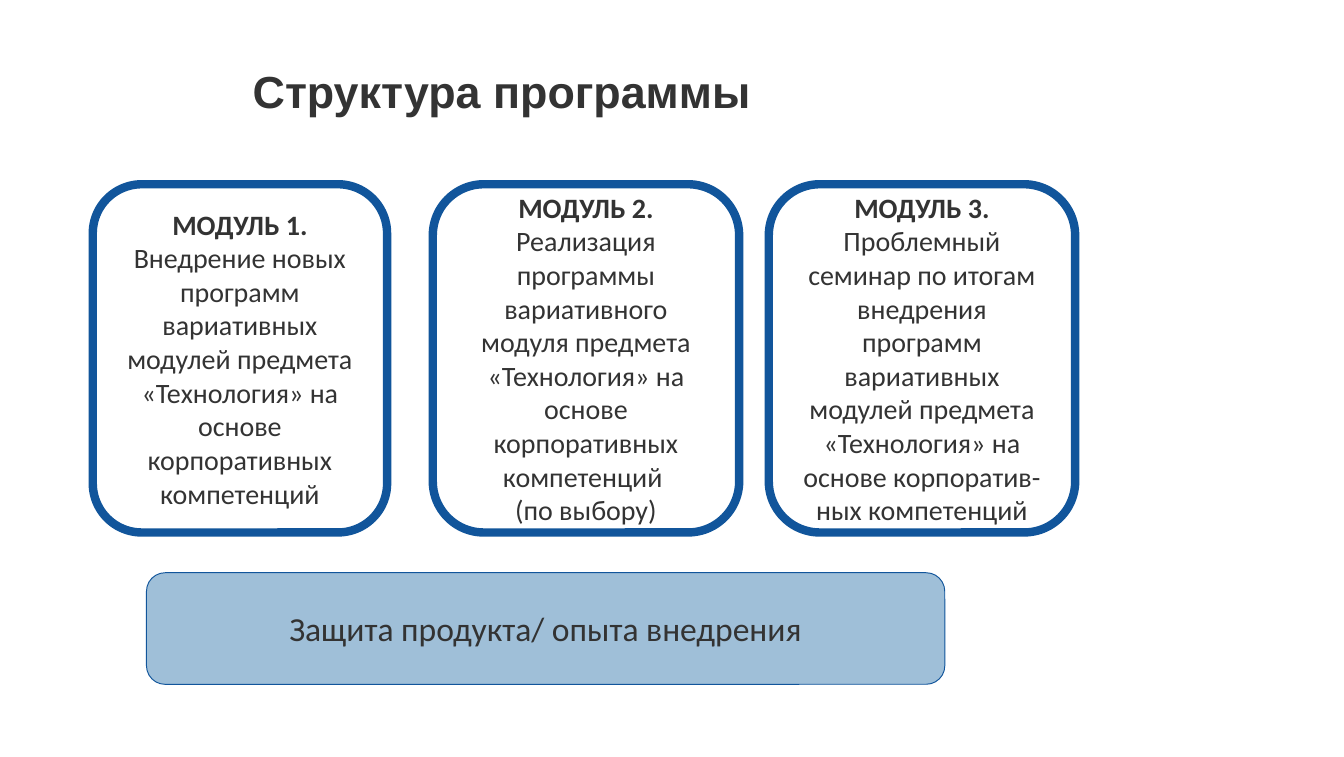
from dataclasses import dataclass

import pptx
import pptx.dml.color
import pptx.enum.shapes
import pptx.enum.text
import pptx.presentation
import pptx.shapes.autoshape
import pptx.slide
import pptx.text.text
import pptx.util

Inches = pptx.util.Inches
RGBColor = pptx.dml.color.RGBColor

TEXT = RGBColor(0x33, 0x33, 0x33)
BLUE = RGBColor(0x11, 0x55, 0x9B)
LIGHT_BLUE = RGBColor(0x9F, 0xBF, 0xD8)
WHITE = RGBColor(0xFF, 0xFF, 0xFF)

MODULE_TOP, MODULE_HEIGHT = 1.37, 2.59
BAND_WIDTH, BAND_HEIGHT = 5.94, 0.83  # shared by the title and the final stage


@dataclass
class Module:
    left: float
    width: float
    heading: str
    description: str
    note: str = ""


MODULES = [
    Module(0.69, 2.19, "МОДУЛЬ 1. ",
           "Внедрение новых программ вариативных модулей предмета "
           "«Технология» на основе корпоративных компетенций"),
    Module(3.22, 2.28, "МОДУЛЬ 2.",
           " Реализация программы вариативного модуля предмета "
           "«Технология» на основе корпоративных компетенций ",
           "(по выбору)"),
    Module(5.72, 2.28, "МОДУЛЬ 3.",
           " Проблемный семинар по итогам внедрения программ вариативных "
           "модулей предмета «Технология» на основе корпоратив-ных компетенций"),
]


def add_run(paragraph: pptx.text.text._Paragraph, text: str, size: float,
            bold: bool = False, font: str = "Calibri") -> None:
    run = paragraph.add_run()
    run.text = text
    run.font.name = font
    run.font.size = pptx.util.Pt(size)
    run.font.bold = bold
    run.font.color.rgb = TEXT


def add_card(slide: pptx.slide.Slide, left: float, top: float, width: float,
             height: float, fill: RGBColor,
             line_width: float) -> pptx.shapes.autoshape.Shape:
    card = slide.shapes.add_shape(
        pptx.enum.shapes.MSO_SHAPE.ROUNDED_RECTANGLE,
        Inches(left), Inches(top), Inches(width), Inches(height))
    card.shadow.inherit = False
    card.fill.solid()
    card.fill.fore_color.rgb = fill
    card.line.color.rgb = BLUE
    card.line.width = pptx.util.Pt(line_width)
    card.text_frame.word_wrap = True
    card.text_frame.vertical_anchor = pptx.enum.text.MSO_ANCHOR.MIDDLE
    card.text_frame.paragraphs[0].alignment = pptx.enum.text.PP_ALIGN.CENTER
    return card


def add_module(slide: pptx.slide.Slide, module: Module) -> None:
    card = add_card(slide, module.left, MODULE_TOP, module.width,
                    MODULE_HEIGHT, WHITE, 4.5)
    summary = card.text_frame.paragraphs[0]
    add_run(summary, module.heading, 15, bold=True)
    add_run(summary, module.description, 15)
    if module.note:
        note = card.text_frame.add_paragraph()
        note.alignment = pptx.enum.text.PP_ALIGN.CENTER
        add_run(note, module.note, 15)


def add_title(slide: pptx.slide.Slide, text: str) -> None:
    title = slide.shapes.title
    title.left, title.top = Inches(1.78), Inches(0.47)
    title.width, title.height = Inches(BAND_WIDTH), Inches(BAND_HEIGHT)
    title.text_frame.auto_size = pptx.enum.text.MSO_AUTO_SIZE.NONE
    title.text_frame.vertical_anchor = pptx.enum.text.MSO_ANCHOR.TOP
    heading = title.text_frame.paragraphs[0]
    heading.alignment = pptx.enum.text.PP_ALIGN.LEFT
    heading.line_spacing = 0.9
    add_run(heading, text, 24, bold=True, font="Arial")


def main() -> None:
    deck = pptx.Presentation()
    deck.slide_width, deck.slide_height = Inches(10), Inches(5.63)
    slide = deck.slides.add_slide(deck.slide_layouts[5])

    # Title
    add_title(slide, "Структура программы")

    # Programme modules
    for module in MODULES:
        add_module(slide, module)

    # Final stage
    defence = add_card(slide, 1.09, 4.26, BAND_WIDTH, BAND_HEIGHT,
                       LIGHT_BLUE, 0.5)
    add_run(defence.text_frame.paragraphs[0],
            "Защита продукта/ опыта внедрения", 18)

    deck.save("out.pptx")


if __name__ == "__main__":
    main()
